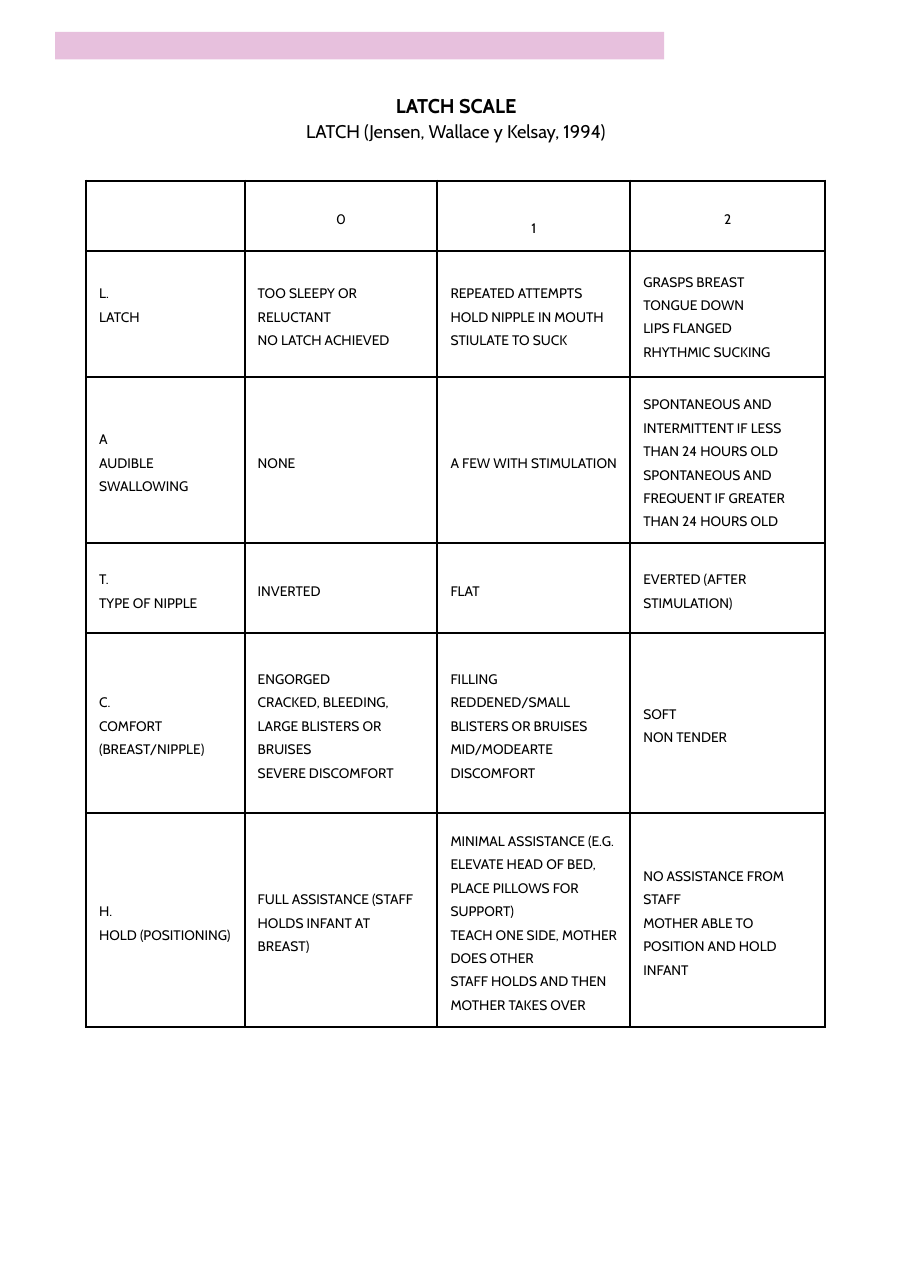
from lxml import etree
from pptx import Presentation
from pptx.dml.color import RGBColor
from pptx.enum.shapes import MSO_SHAPE
from pptx.enum.text import MSO_ANCHOR, MSO_AUTO_SIZE, PP_ALIGN
from pptx.oxml.ns import qn
from pptx.util import Inches, Pt

CENTER, LEFT = PP_ALIGN.CENTER, PP_ALIGN.LEFT
TOP, MIDDLE = MSO_ANCHOR.TOP, MSO_ANCHOR.MIDDLE
RECTANGLE, NO_AUTOFIT = MSO_SHAPE.RECTANGLE, MSO_AUTO_SIZE.NONE

FONT = "Cabin"
BLACK, PINK, WHITE = "000000", "E7C0DD", "FFFFFF"
CELL_MARGIN = 0.12
COLUMN_WIDTHS = [1.44, 1.75, 1.75, 1.77]
ROW_HEIGHTS = [0.64, 1.14, 1.51, 0.81, 1.64, 1.93]
SCORES = [
    ["", "0", "1", "2"],
    ["L.\nLATCH",
     "TOO SLEEPY OR RELUCTANT\nNO LATCH ACHIEVED",
     "REPEATED ATTEMPTS\nHOLD NIPPLE IN MOUTH\nSTIULATE TO SUCK",
     "GRASPS BREAST\nTONGUE DOWN\nLIPS FLANGED\nRHYTHMIC SUCKING"],
    ["A\nAUDIBLE SWALLOWING",
     "NONE",
     "A FEW WITH STIMULATION",
     "SPONTANEOUS AND INTERMITTENT IF LESS THAN 24 HOURS OLD\n"
     "SPONTANEOUS AND FREQUENT IF GREATER THAN 24 HOURS OLD"],
    ["T.\nTYPE OF NIPPLE", "INVERTED", "FLAT", "EVERTED (AFTER STIMULATION)"],
    ["C.\nCOMFORT\n(BREAST/NIPPLE)",
     "ENGORGED\nCRACKED, BLEEDING, LARGE BLISTERS OR BRUISES\nSEVERE DISCOMFORT",
     "FILLING\nREDDENED/SMALL BLISTERS OR BRUISES\nMID/MODEARTE DISCOMFORT",
     "SOFT\nNON TENDER"],
    ["H.\nHOLD (POSITIONING)",
     "FULL ASSISTANCE (STAFF HOLDS INFANT AT BREAST)",
     "MINIMAL ASSISTANCE (E.G. ELEVATE HEAD OF BED, PLACE PILLOWS FOR SUPPORT)\n"
     "TEACH ONE SIDE, MOTHER DOES OTHER\n"
     "STAFF HOLDS AND THEN MOTHER TAKES OVER",
     "NO ASSISTANCE FROM STAFF\nMOTHER ABLE TO POSITION AND HOLD INFANT"],
]


def rgb(color):
    """Turn a hex string into a colour."""
    return RGBColor.from_string(color)


def format_paragraph(paragraph, size, align, spacing, bold=False):
    """Set the font and the layout of a paragraph."""
    paragraph.alignment = align
    paragraph.line_spacing = spacing
    for font in [paragraph.font] + [run.font for run in paragraph.runs]:
        font.name = FONT
        font.size = Pt(size)
        font.bold = bold
        font.color.rgb = rgb(BLACK)


def add_band(slide, left, top, width, height):
    """Add the plain coloured band at the top of the page."""
    band = slide.shapes.add_shape(
        RECTANGLE, Inches(left), Inches(top), Inches(width), Inches(height))
    band.shadow.inherit = False
    band.fill.solid()
    band.fill.fore_color.rgb = rgb(PINK)
    band.line.fill.background()


def set_heading(slide, name, authors):
    """Place the scale name and its authors in the title placeholder."""
    heading = slide.shapes.title
    heading.left, heading.top = Inches(1.68), Inches(0.83)
    heading.width, heading.height = Inches(4.92), Inches(0.46)
    frame = heading.text_frame
    frame.text = f"{name}\n{authors}"
    frame.word_wrap = True
    frame.auto_size = NO_AUTOFIT
    frame.vertical_anchor = TOP
    frame.margin_left = frame.margin_right = 0
    frame.margin_top = frame.margin_bottom = 0
    format_paragraph(frame.paragraphs[0], 13, CENTER, 1.1, bold=True)
    format_paragraph(frame.paragraphs[1], 12, CENTER, 1.1)


def set_borders(cell):
    """Draw a black line on each side of a cell."""
    properties = cell._tc.get_or_add_tcPr()
    for position, side in enumerate(("lnL", "lnR", "lnT", "lnB")):
        border = etree.Element(qn(f"a:{side}"), w=str(Pt(1.5)))
        fill = etree.SubElement(border, qn("a:solidFill"))
        etree.SubElement(fill, qn("a:srgbClr"), val=BLACK)
        properties.insert(position, border)


def fill_cell(cell, wording, align):
    """Write and format one cell of the scale."""
    cell.text = wording
    cell.vertical_anchor = MIDDLE
    cell.margin_left = cell.margin_right = Inches(CELL_MARGIN)
    cell.margin_top = cell.margin_bottom = Inches(CELL_MARGIN)
    cell.fill.solid()
    cell.fill.fore_color.rgb = rgb(WHITE)
    for paragraph in cell.text_frame.paragraphs:
        format_paragraph(paragraph, 9, align, 1.4)
    set_borders(cell)


def add_scale(slide, left, top):
    """Add the scoring table."""
    scale = slide.shapes.add_table(
        len(ROW_HEIGHTS), len(COLUMN_WIDTHS), Inches(left), Inches(top),
        Inches(sum(COLUMN_WIDTHS)), Inches(sum(ROW_HEIGHTS))).table
    for column, width in zip(scale.columns, COLUMN_WIDTHS):
        column.width = Inches(width)
    for row, height in zip(scale.rows, ROW_HEIGHTS):
        row.height = Inches(height)
    for row_index, wordings in enumerate(SCORES):
        align = LEFT if row_index else CENTER
        for column_index, wording in enumerate(wordings):
            fill_cell(scale.cell(row_index, column_index), wording, align)
    scale.cell(0, 2).margin_top = Inches(CELL_MARGIN + 0.16)
    scale.cell(1, 0).margin_bottom = Inches(CELL_MARGIN + 0.21)


def main():
    """Build the page and save it."""
    presentation = Presentation()
    presentation.slide_width = Inches(8.26)
    presentation.slide_height = Inches(11.69)
    slide = presentation.slides.add_slide(presentation.slide_layouts[5])
    add_band(slide, 0.5, 0.29, 5.53, 0.25)
    add_scale(slide, 0.78, 1.64)
    set_heading(slide, "LATCH SCALE", "LATCH (Jensen, Wallace y Kelsay, 1994)")
    presentation.save("out.pptx")


if __name__ == "__main__":
    main()
